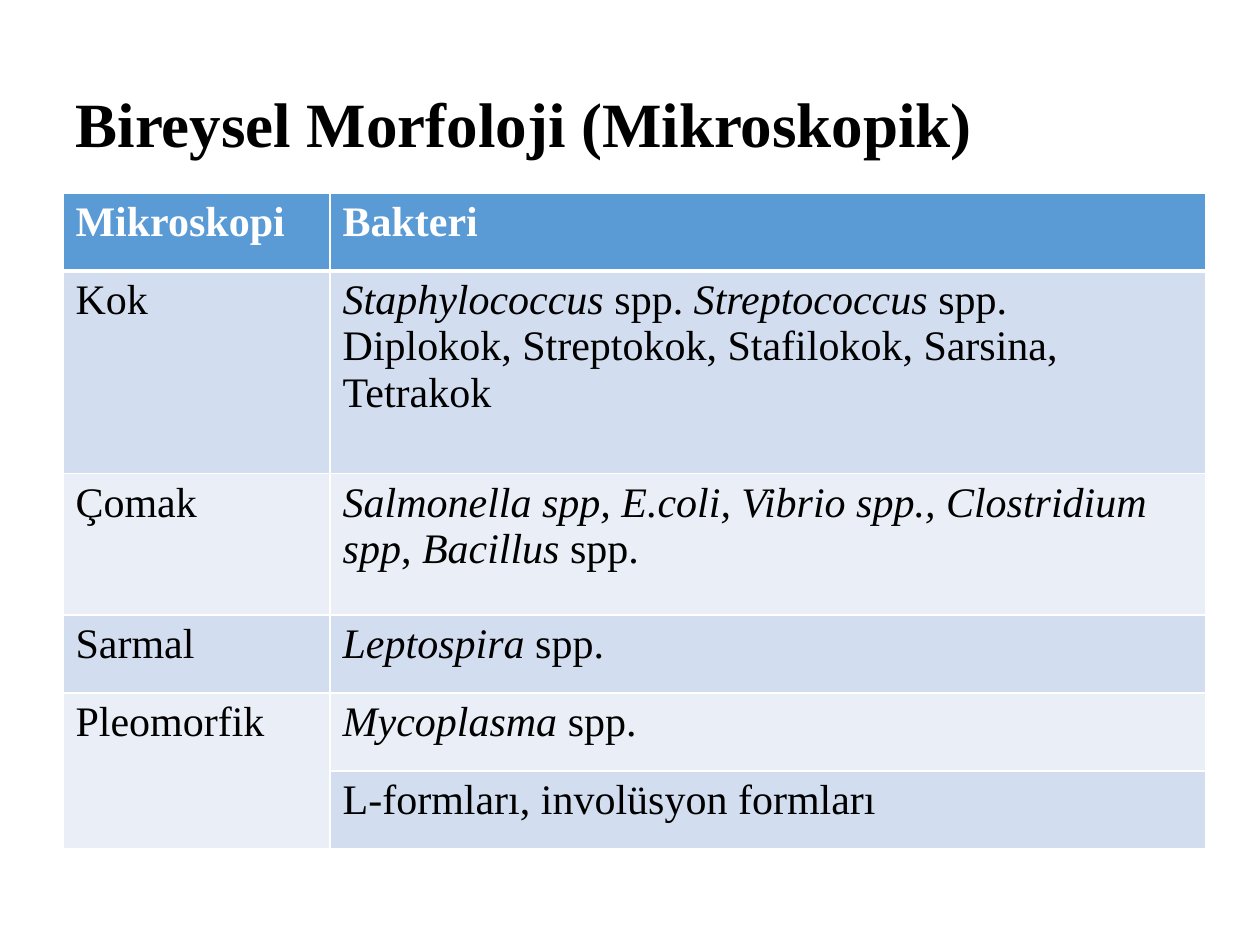
from lxml import etree
from pptx import Presentation
from pptx.dml.color import RGBColor
from pptx.enum import text
from pptx.oxml import ns
from pptx.util import Inches, Pt

FONT = "Times New Roman"
COLORS = {"header": "5B9BD5", "odd": "D2DEEF", "even": "EAEFF7",
          "dark": "000000", "light": "FFFFFF"}
COL_WIDTHS = [2.12, 6.95]
ROW_HEIGHTS = [0.62, 1.61, 1.12, 0.62, 0.62, 0.62]
ITALIC, PLAIN = True, False
ROWS = [
    ("Mikroskopi", [[("Bakteri", PLAIN)]]),
    ("Kok", [[("Staphylococcus ", ITALIC), ("spp. ", PLAIN),
              ("Streptococcus ", ITALIC), ("spp.", PLAIN)],
             [("Diplokok, Streptokok, Stafilokok, Sarsina, Tetrakok", PLAIN)]]),
    ("Çomak", [[("Salmonella spp, E.coli, Vibrio spp., Clostridium spp", ITALIC),
                (", ", PLAIN), ("Bacillus ", ITALIC), ("spp.", PLAIN)]]),
    ("Sarmal", [[("Leptospira ", ITALIC), ("spp.", PLAIN)]]),
    ("Pleomorfik", [[("Mycoplasma ", ITALIC), ("spp.", PLAIN)]]),
    ("", [[("L-formları, involüsyon formları", PLAIN)]]),
]


def rgb(name):
    return RGBColor.from_string(COLORS[name])


def format_run(r, size, color, bold=False, italic=False):
    r.font.name = FONT
    r.font.size = Pt(size)
    r.font.bold = bold
    r.font.italic = italic
    r.font.color.rgb = rgb(color)


def add_title(s, left, top, width, height):
    sp = s.shapes.title
    sp.left, sp.top, sp.width, sp.height = map(Inches, (left, top, width, height))
    tf = sp.text_frame
    tf.text = "Bireysel Morfoloji (Mikroskopik)"
    tf.vertical_anchor = text.MSO_ANCHOR.MIDDLE
    p = tf.paragraphs[0]
    p.alignment = text.PP_ALIGN.LEFT
    p.line_spacing = 0.9
    format_run(p.runs[0], 36, "dark", bold=True)


def set_borders(cell, row):
    tc_pr = cell._tc.get_or_add_tcPr()
    widths = {"L": 1, "R": 1, "T": 3 if row == 1 else 1, "B": 3 if row == 0 else 1}
    for i, (side, width) in enumerate(widths.items()):
        ln = etree.Element(ns.qn(f"a:ln{side}"), w=str(Pt(width)))
        fill = etree.SubElement(ln, ns.qn("a:solidFill"))
        etree.SubElement(fill, ns.qn("a:srgbClr"), val=COLORS["light"])
        tc_pr.insert(i, ln)


def fill_cell(cell, row, paragraphs):
    tf = cell.text_frame
    for i, parts in enumerate(paragraphs):
        p = tf.add_paragraph() if i else tf.paragraphs[0]
        for words, italic in parts:
            r = p.add_run()
            r.text = words
            format_run(r, 24, "dark" if row else "light", row == 0, italic)


def add_bacteria_table(s, left, top, width, height):
    frame = s.shapes.add_table(len(ROWS), len(COL_WIDTHS), *map(Inches, (left, top, width, height)))
    table = frame.table
    for col, w in zip(table.columns, COL_WIDTHS):
        col.width = Inches(w)
    for row, h in zip(table.rows, ROW_HEIGHTS):
        row.height = Inches(h)
    table.cell(4, 0).merge(table.cell(5, 0))
    for i, (shape_name, bacteria) in enumerate(ROWS):
        color = "header" if i == 0 else "odd" if i % 2 else "even"
        label = [[(shape_name, PLAIN)]] if shape_name else []
        for j, paragraphs in enumerate((label, bacteria)):
            cell = table.cell(i, j)
            cell.fill.solid()
            cell.fill.fore_color.rgb = rgb(color)
            set_borders(cell, i)
            fill_cell(cell, i, paragraphs)


def main():
    prs = Presentation()
    prs.slide_width, prs.slide_height = Inches(10), Inches(7.5)
    s = prs.slides.add_slide(prs.slide_layouts[5])
    add_title(s, 0.5, 0.3, 9, 1.42)
    add_bacteria_table(s, 0.5, 1.53, sum(COL_WIDTHS), sum(ROW_HEIGHTS))
    prs.save("out.pptx")


if __name__ == "__main__":
    main()
